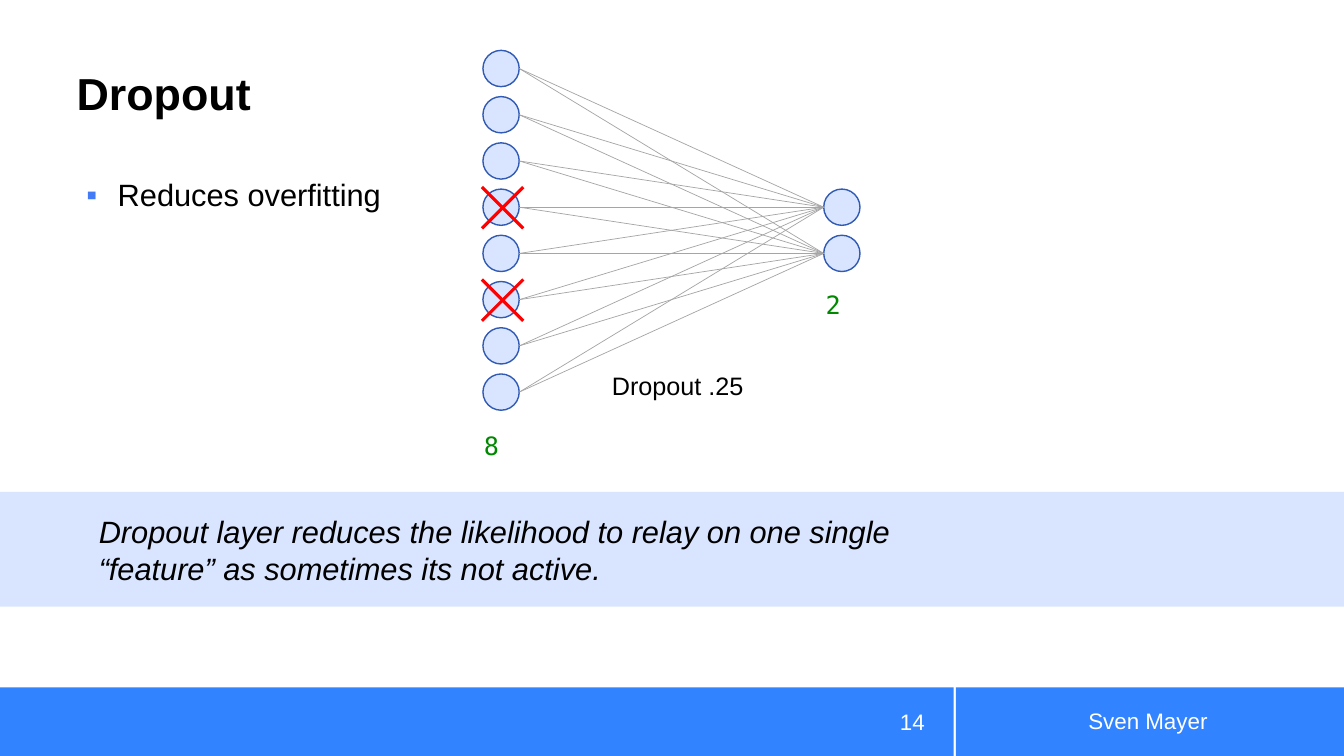
import pptx
import pptx.dml.color
import pptx.enum.shapes
import pptx.enum.text
import pptx.oxml
import pptx.oxml.ns
import pptx.util
from pptx.util import Inches

COLORS = {
    "black": "000000",
    "white": "FFFFFF",
    "footer": "3183FF",
    "pale": "D9E5FF",
    "outline": "315AB5",
    "bullet": "427BF5",
    "link": "A5A5A5",
    "count": "008800",
    "cross": "FF0000",
}
ALIGN = pptx.enum.text.PP_ALIGN
ANCHOR = pptx.enum.text.MSO_ANCHOR
SHAPE = pptx.enum.shapes.MSO_SHAPE

NODE_SIZE = 0.36
NODE_STEP = 0.4586
INPUT_LEFT, INPUT_TOP, INPUT_COUNT = 4.79, 0.5, 8
OUTPUT_LEFT, OUTPUT_ROWS = 8.17, (3, 4)
DROPPED_ROWS = (3, 5)
CROSS_SIZE = 0.41


def color(name):
    return pptx.dml.color.RGBColor.from_string(COLORS[name])


def add_filled(page, kind, left, top, width, height, fill, outline=None):
    shape = page.shapes.add_shape(
        kind, Inches(left), Inches(top), Inches(width), Inches(height))
    shape.shadow.inherit = False
    shape.fill.solid()
    shape.fill.fore_color.rgb = color(fill)
    if outline:
        shape.line.color.rgb = color(outline)
        shape.line.width = pptx.util.Pt(1)
    else:
        shape.line.fill.background()
    return shape


def write(shape, text, size, ink="black", font="Arial", align=ALIGN.LEFT,
          anchor=ANCHOR.TOP, bold=False, italic=False, wrap=True):
    """Set the single paragraph of a shape and return it."""
    frame = shape.text_frame
    frame.text = text
    frame.word_wrap = wrap
    frame.vertical_anchor = anchor
    para = frame.paragraphs[0]
    para.alignment = align
    for span in para.runs:
        span.font.name = font
        span.font.size = pptx.util.Pt(size)
        span.font.bold = bold
        span.font.italic = italic
        span.font.color.rgb = color(ink)
    return para


def add_text(page, left, top, width, height, text, size, **style):
    box = page.shapes.add_textbox(
        Inches(left), Inches(top), Inches(width), Inches(height))
    return box, write(box, text, size, **style)


def set_margins(box, left, top, right, bottom):
    frame = box.text_frame
    frame.margin_left, frame.margin_top = Inches(left), Inches(top)
    frame.margin_right, frame.margin_bottom = Inches(right), Inches(bottom)


def add_bullet(para):
    properties = para._p.get_or_add_pPr()
    properties.set("marL", str(Inches(0.31)))
    properties.set("indent", str(Inches(-0.31)))
    namespace = pptx.oxml.ns.nsdecls("a")
    for markup in (
            f'<a:buClr {namespace}><a:srgbClr val="{COLORS["bullet"]}"/></a:buClr>',
            f'<a:buFont {namespace} typeface="Arial"/>',
            f'<a:buChar {namespace} char="▪"/>'):
        properties.append(pptx.oxml.parse_xml(markup))


def add_line(page, start, end, ink, width):
    line = page.shapes.add_connector(
        pptx.enum.shapes.MSO_CONNECTOR.STRAIGHT,
        *(Inches(value) for value in (*start, *end)))
    line.line.color.rgb = color(ink)
    line.line.width = pptx.util.Pt(width)
    line._element.spPr.append(pptx.oxml.parse_xml(
        f'<a:effectLst {pptx.oxml.ns.nsdecls("a")}/>'))


def add_cross(page, left, top):
    right, bottom = left + CROSS_SIZE, top + CROSS_SIZE
    add_line(page, (left, top), (right, bottom), "cross", 2.25)
    add_line(page, (left, bottom), (right, top), "cross", 2.25)


def node_top(row):
    return INPUT_TOP + row * NODE_STEP


def add_network(page):
    nodes = [(OUTPUT_LEFT, row) for row in OUTPUT_ROWS]
    nodes += [(INPUT_LEFT, row) for row in range(INPUT_COUNT)]
    for left, row in nodes:
        add_filled(page, SHAPE.OVAL, left, node_top(row),
                   NODE_SIZE, NODE_SIZE, "pale", "outline")
    for left, top, count in ((4.7, 4.22, "8"), (8.09, 2.82, "2")):
        add_text(page, left, top, 0.35, 0.4, count, 18, ink="count",
                 font="DejaVu Sans Mono", wrap=False)

    radius = NODE_SIZE / 2
    for output_row in OUTPUT_ROWS:
        for input_row in range(INPUT_COUNT):
            add_line(page,
                     (INPUT_LEFT + NODE_SIZE, node_top(input_row) + radius),
                     (OUTPUT_LEFT, node_top(output_row) + radius),
                     "link", 0.5)
    add_text(page, 5.97, 3.62, 1.52, 0.4, "Dropout .25", 18, wrap=False)
    for row in DROPPED_ROWS:
        add_cross(page, INPUT_LEFT - 0.01, node_top(row) - 0.02)


def add_footer(page):
    for left, width in ((0, 9.46), (9.48, 3.85)):
        add_filled(page, SHAPE.RECTANGLE, left, 6.82, width, 0.68, "footer")
    add_text(page, 9.61, 6.95, 3.55, 0.4, "Sven Mayer", 16, ink="white",
             align=ALIGN.CENTER, anchor=ANCHOR.MIDDLE)
    add_text(page, 8.41, 6.96, 0.86, 0.4, "14", 16, ink="white",
             align=ALIGN.RIGHT, anchor=ANCHOR.MIDDLE)


def add_heading(page):
    title, para = add_text(page, 0.76, 0.13, 8.7, 1.06, "Dropout", 32,
                           anchor=ANCHOR.BOTTOM, bold=True)
    set_margins(title, 0, 0, 0, 0)
    para.line_spacing = 0.9

    _, para = add_text(page, 0.76, 1.74, 8.7, 4.96, "Reduces overfitting", 22)
    para.line_spacing = 0.9
    para.space_before = pptx.util.Pt(5)
    para.space_after = pptx.util.Pt(6)
    add_bullet(para)


def add_banner(page):
    banner = add_filled(page, SHAPE.RECTANGLE, 0, 4.88, 13.33, 1.14, "pale")
    write(banner, "Dropout layer reduces the likelihood to relay on one single "
          "“feature” as sometimes its not active.", 22,
          anchor=ANCHOR.MIDDLE, italic=True)
    set_margins(banner, 0.98, 0.2, 3.94, 0.2)


def main():
    deck = pptx.Presentation()
    deck.slide_width, deck.slide_height = Inches(13.33), Inches(7.5)
    page = deck.slides.add_slide(deck.slide_layouts[6])
    add_footer(page)
    add_heading(page)
    add_network(page)
    add_banner(page)
    deck.save("out.pptx")


if __name__ == "__main__":
    main()
